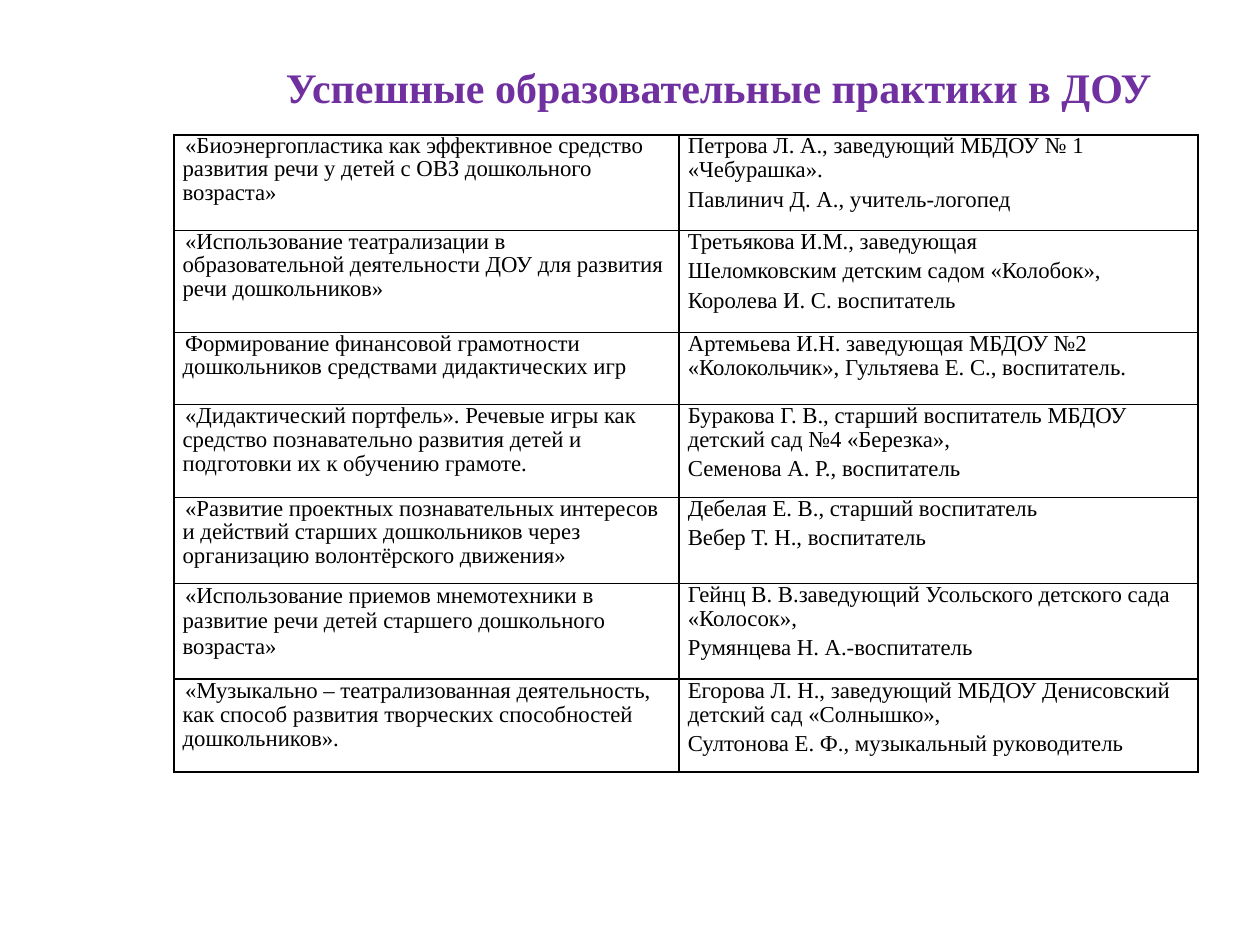
"""Build a slide that lists successful kindergarten teaching practices."""
from dataclasses import dataclass

from lxml.etree import SubElement as Sub
from pptx import Presentation as Deck
from pptx.dml.color import RGBColor as Color
from pptx.enum.text import MSO_AUTO_SIZE as Fit
from pptx.oxml.ns import qn
from pptx.util import Inches, Pt


@dataclass(frozen=True)
class Theme:
    face: str = "Times New Roman"
    accent: str = "7030A0"
    ink: str = "000000"
    head: float = 24
    body: float = 13
    rule: float = 1


THEME = Theme()
WIDE, HIGH = 10, 7.5
COLS = (4.01, 4.12)
TIGHT, EVEN, LOOSE = 13.4, 13.7, 14.4

ROWS = [
    (0.76, TIGHT, "«Биоэнергопластика как эффективное средство развития речи у детей с ОВЗ дошкольного возраста»",
     ["Петрова Л. А., заведующий МБДОУ № 1 «Чебурашка».",
      "Павлинич Д. А., учитель-логопед"]),
    (0.81, TIGHT, "«Использование театрализации в образовательной деятельности ДОУ для развития речи дошкольников»",
     ["Третьякова И.М., заведующая",
      "Шеломковским детским садом «Колобок»,",
      "Королева И. С. воспитатель"]),
    (0.57, TIGHT, "Формирование финансовой грамотности дошкольников средствами дидактических игр",
     ["Артемьева И.Н. заведующая МБДОУ №2 «Колокольчик», Гультяева Е. С., воспитатель."]),
    (0.74, EVEN, "«Дидактический портфель». Речевые игры как средство познавательно развития детей и подготовки их к обучению грамоте.",
     ["Буракова Г. В., старший воспитатель МБДОУ детский сад №4 «Березка»,",
      "Семенова А. Р., воспитатель"]),
    (0.68, TIGHT, "«Развитие проектных познавательных интересов и действий старших дошкольников через организацию волонтёрского движения»",
     ["Дебелая Е. В., старший воспитатель",
      "Вебер Т. Н., воспитатель"]),
    (0.76, LOOSE, "«Использование приемов мнемотехники в развитие речи детей старшего дошкольного возраста»",
     ["Гейнц В. В.заведующий Усольского детского сада «Колосок»,",
      "Румянцева Н. А.-воспитатель"]),
    (0.74, EVEN, "«Музыкально – театрализованная деятельность, как способ развития творческих способностей дошкольников».",
     ["Егорова Л. Н., заведующий МБДОУ Денисовский детский сад «Солнышко»,",
      "Султонова Е. Ф., музыкальный руководитель"]),
]


def style(para, size, tint, bold=False):
    """Set the font of a paragraph."""
    font = para.font
    font.name, font.size, font.bold = THEME.face, Pt(size), bold
    font.color.rgb = Color.from_string(tint)


def frame(cell):
    """Draw a thin rule on every side of a cell."""
    props = cell._tc.get_or_add_tcPr()
    for side in "LRTB":
        line = Sub(props, qn(f"a:ln{side}"), w=str(Pt(THEME.rule)))
        fill = Sub(line, qn("a:solidFill"))
        Sub(fill, qn("a:srgbClr"), val=THEME.ink)
    cell.fill.background()


def write(cell, lines, pitch, indent=0):
    """Fill a cell with paragraphs of a fixed line pitch."""
    cell.margin_left = cell.margin_right = Inches(0.07)
    cell.margin_top = cell.margin_bottom = 0
    cell.text = "\n".join(lines)
    for num, para in enumerate(cell.text_frame.paragraphs):
        para.line_spacing = Pt(pitch)
        para.space_before = Pt(3 if num else 0)
        if indent:
            para._p.get_or_add_pPr().set("indent", str(Inches(indent)))
        style(para, THEME.body, THEME.ink)
    frame(cell)


def title(slide, text):
    """Add the heading above the table."""
    box = slide.shapes.add_textbox(Inches(2.17), Inches(0.44), Inches(7.15), Inches(0.5))
    body = box.text_frame
    body.text = text
    body.word_wrap, body.auto_size = False, Fit.SHAPE_TO_FIT_TEXT
    style(body.paragraphs[0], THEME.head, THEME.accent, True)


def grid(slide):
    """Add the table of practices and their authors."""
    high = sum(row[0] for row in ROWS)
    table = slide.shapes.add_table(len(ROWS), len(COLS), Inches(1.38), Inches(1.07),
                                   Inches(sum(COLS)), Inches(high)).table
    table.first_row = table.horz_banding = False
    for col, width in zip(table.columns, COLS):
        col.width = Inches(width)
    for num, (tall, pitch, topic, staff) in enumerate(ROWS):
        table.rows[num].height = Inches(tall)
        write(table.cell(num, 0), [topic], pitch, 0.02)
        write(table.cell(num, 1), staff, EVEN)


def main():
    """Build and save the slide."""
    deck = Deck()
    deck.slide_width, deck.slide_height = Inches(WIDE), Inches(HIGH)
    slide = deck.slides.add_slide(deck.slide_layouts[6])
    title(slide, "Успешные образовательные практики в ДОУ")
    grid(slide)
    deck.save("out.pptx")


if __name__ == "__main__":
    main()
